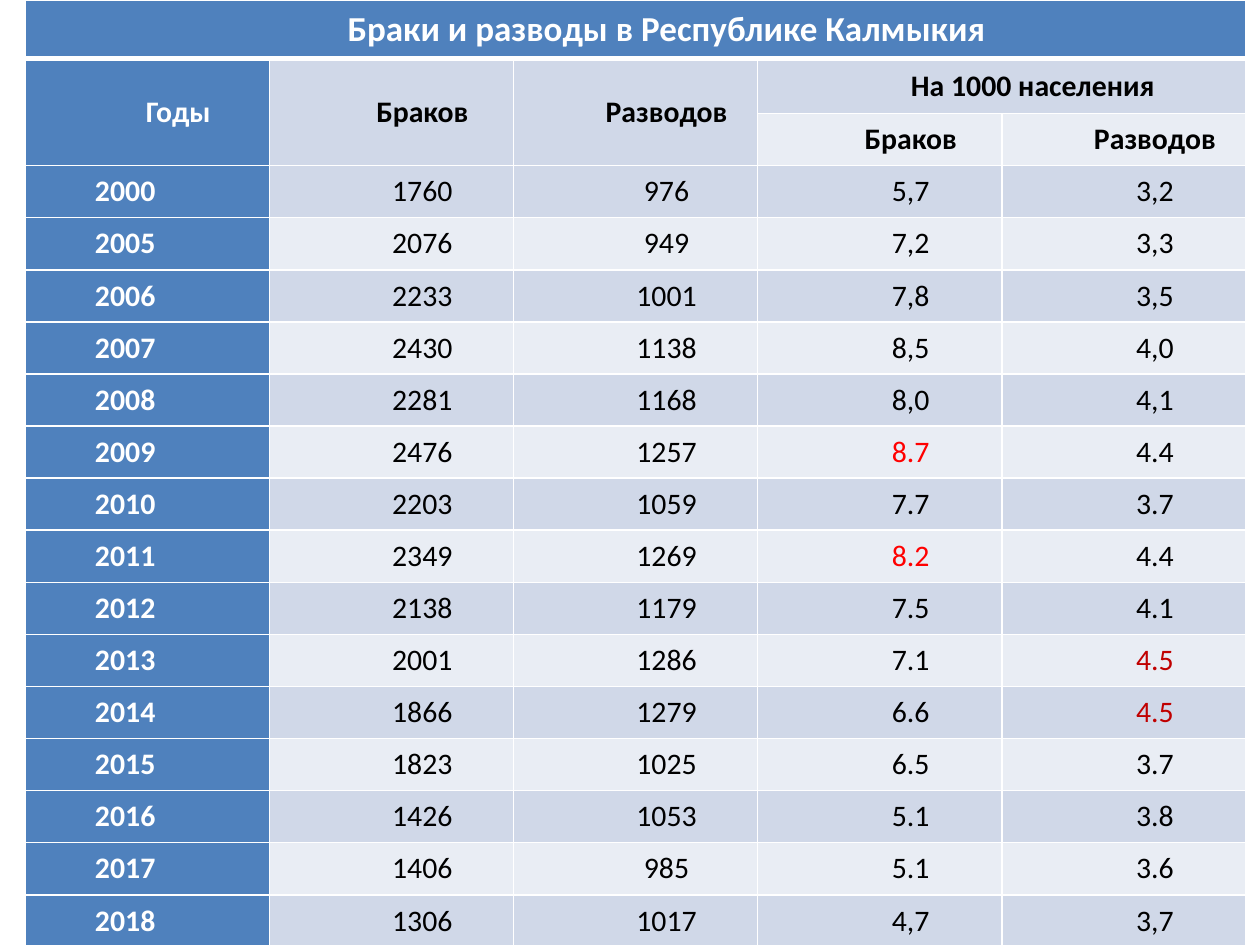
"""Build a slide with a table of marriages and divorces by year."""
from typing import NamedTuple

from lxml.etree import SubElement
from pptx import Presentation
from pptx.dml.color import RGBColor
from pptx.enum.text import MSO_ANCHOR, PP_ALIGN
from pptx.oxml.ns import qn
from pptx.table import Table, _Cell
from pptx.util import Pt

WHITE = RGBColor(0xFF, 0xFF, 0xFF)
BLACK = RGBColor(0, 0, 0)
BLUE = RGBColor(0x4F, 0x81, 0xBD)
DARK = RGBColor(0xD0, 0xD8, 0xE8)
LIGHT = RGBColor(0xE9, 0xED, 0xF4)
RED = RGBColor(0xFF, 0, 0)
WINE = RGBColor(0xC0, 0, 0)

LEFT, COL, INSET, INDENT = 14.4, 139.54, 4.5, 35.4
TOP_ROW, HEAD_ROW, ROW = 33.4, 31.4, 29.75


class Head(NamedTuple):
    text: str
    row: int
    col: int
    rows: int = 1
    cols: int = 1
    size: float = 17


class Year(NamedTuple):
    year: str
    weds: str
    splits: str
    wed_rate: str
    split_rate: str


HEADS = [
    Head("Браки и разводы в Республике Калмыкия", 0, 0, cols=5, size=20),
    Head("Годы", 1, 0, rows=2),
    Head("Браков", 1, 1, rows=2),
    Head("Разводов", 1, 2, rows=2),
    Head("На 1000 населения", 1, 3, cols=2),
    Head("Браков", 2, 3),
    Head("Разводов", 2, 4),
]
YEARS = [
    Year("2000", "1760", "976", "5,7", "3,2"),
    Year("2005", "2076", "949", "7,2", "3,3"),
    Year("2006", "2233", "1001", "7,8", "3,5"),
    Year("2007", "2430", "1138", "8,5", "4,0"),
    Year("2008", "2281", "1168", "8,0", "4,1"),
    Year("2009", "2476", "1257", "8.7", "4.4"),
    Year("2010", "2203", "1059", "7.7", "3.7"),
    Year("2011", "2349", "1269", "8.2", "4.4"),
    Year("2012", "2138", "1179", "7.5", "4.1"),
    Year("2013", "2001", "1286", "7.1", "4.5"),
    Year("2014", "1866", "1279", "6.6", "4.5"),
    Year("2015", "1823", "1025", "6.5", "3.7"),
    Year("2016", "1426", "1053", "5.1", "3.8"),
    Year("2017", "1406", "985", "5.1", "3.6"),
    Year("2018", "1306", "1017", "4,7", "3,7"),
]
MARKS = {("2009", 3): RED, ("2011", 3): RED, ("2013", 4): WINE, ("2014", 4): WINE}
FIRST = 3


def write(cell: _Cell, text: str, *, size: float = 17, color: RGBColor = BLACK,
          bold: bool = False, align: PP_ALIGN = PP_ALIGN.CENTER) -> None:
    """Put formatted text in a cell."""
    para = cell.text_frame.paragraphs[0]
    para.alignment = align
    props = para._p.get_or_add_pPr()
    props.set("marL", "0")
    props.set("indent", str(Pt(INDENT)))
    run = para.add_run()
    run.text = text
    run.font.name = "Calibri"
    run.font.size = Pt(size)
    run.font.bold = bold
    run.font.color.rgb = color


def edge(cell: _Cell, side: str, width: float) -> None:
    """Draw one white border of a cell."""
    line = SubElement(cell._tc.get_or_add_tcPr(), qn(f"a:ln{side}"), w=str(Pt(width)))
    fill = SubElement(line, qn("a:solidFill"))
    SubElement(fill, qn("a:srgbClr"), val=str(WHITE))


def style(cell: _Cell, row: int, col: int) -> None:
    """Set the borders, fill and margins of a cell."""
    edge(cell, "L", 1)
    edge(cell, "R", 1)
    if row != 1:
        edge(cell, "T", 1)
    edge(cell, "B", 1 if row else 3)
    cell.fill.solid()
    band = DARK if row % 2 else LIGHT
    cell.fill.fore_color.rgb = BLUE if row == 0 or col == 0 else band
    cell.vertical_anchor = MSO_ANCHOR.MIDDLE
    cell.margin_left = cell.margin_right = Pt(INSET)
    cell.margin_top = cell.margin_bottom = Pt(INSET)


def fill_heads(table: Table) -> None:
    """Merge and label the heading cells."""
    for head in HEADS:
        cell = table.cell(head.row, head.col)
        if head.rows * head.cols > 1:
            cell.merge(table.cell(head.row + head.rows - 1, head.col + head.cols - 1))
        color = BLACK if head.col else WHITE
        write(cell, head.text, size=head.size, color=color, bold=True)


def fill_years(table: Table) -> None:
    """Write one row of values per year."""
    for row, item in enumerate(YEARS, FIRST):
        write(table.cell(row, 0), item.year, color=WHITE, bold=True, align=PP_ALIGN.LEFT)
        for col, text in enumerate(item[1:], 1):
            color = MARKS.get((item.year, col), BLACK)
            write(table.cell(row, col), text, color=color)


def main() -> None:
    """Build and save the slide."""
    deck = Presentation()
    deck.slide_width, deck.slide_height = Pt(720), Pt(540)
    slide = deck.slides.add_slide(deck.slide_layouts[6])
    highs = [TOP_ROW, HEAD_ROW] + [ROW] * (len(YEARS) + 1)
    wide = len(Year._fields)
    table = slide.shapes.add_table(len(highs), wide, Pt(LEFT), Pt(0),
                                   Pt(COL * wide), Pt(sum(highs))).table
    for col in table.columns:
        col.width = Pt(COL)
    for row, high in enumerate(highs):
        table.rows[row].height = Pt(high)
        for col in range(wide):
            style(table.cell(row, col), row, col)
    fill_heads(table)
    fill_years(table)
    deck.save("out.pptx")


if __name__ == "__main__":
    main()
